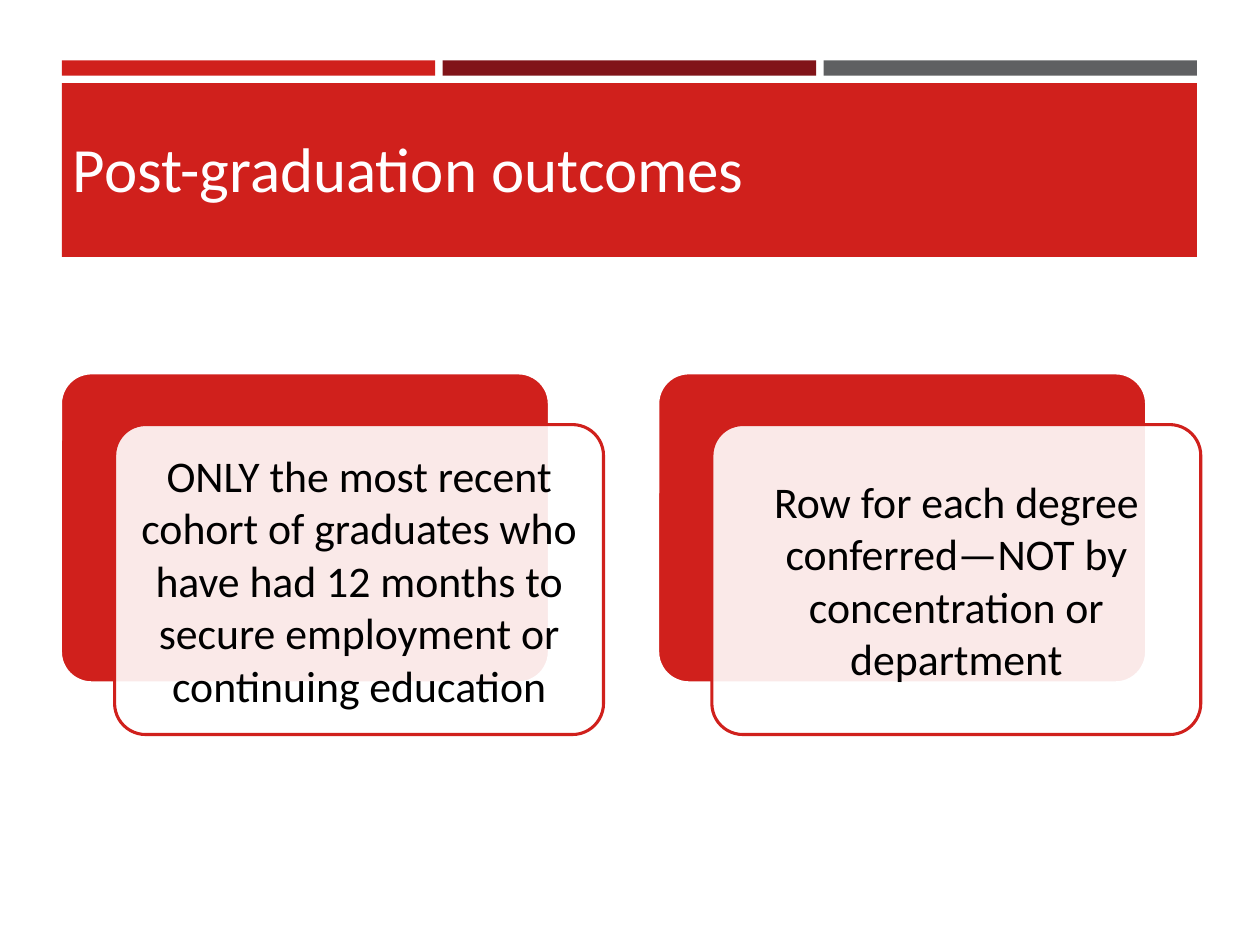
from lxml import etree
from pptx import Presentation
from pptx.dml.color import RGBColor
from pptx.enum import shapes, text
from pptx.oxml import ns
from pptx.util import Inches, Pt

RED = RGBColor(0xD0, 0x20, 0x1C)
MAROON = RGBColor(0x81, 0x14, 0x19)
GRAY = RGBColor(0x5F, 0x60, 0x62)
WHITE = RGBColor(0xFF, 0xFF, 0xFF)
CREAM = RGBColor(0xFF, 0xFE, 0xFF)
BLACK = RGBColor(0, 0, 0)
RECT = shapes.MSO_SHAPE.RECTANGLE
ROUND = shapes.MSO_SHAPE.ROUNDED_RECTANGLE

TITLE = "Post-graduation outcomes"
STRIPES = [RED, MAROON, GRAY]
CARDS = [
    "ONLY the most recent cohort of graduates who have had 12 months to "
    "secure employment or continuing education",
    "Row for each degree conferred—NOT by concentration or department",
]

LEFT, WIDTH, GAP = 0.49, 9.01, 0.06
CARD_X, CARD_Y, CARD_W, CARD_H = 0.48, 2.96, 3.88, 2.46
STEP = 4.74
SHIFT_X, SHIFT_Y = 0.43, 0.41
INSET = 0.07


def add_box(slide, kind, x, y, w, h, fill, line=None, alpha=None):
    box = slide.shapes.add_shape(kind, Inches(x), Inches(y), Inches(w), Inches(h))
    box.shadow.inherit = False
    box.fill.solid()
    box.fill.fore_color.rgb = fill
    if alpha is not None:
        color = box.fill._xPr.find(".//" + ns.qn("a:srgbClr"))
        etree.SubElement(color, ns.qn("a:alpha"), val=str(alpha * 1000))
    if line is None:
        box.line.fill.background()
    else:
        box.line.color.rgb = line
        box.line.width = Pt(1.75)
    if kind == ROUND:
        box.adjustments[0] = 0.1
    return box


def add_text(slide, words, x, y, w, h, size, color, align, pad=None):
    box = slide.shapes.add_textbox(Inches(x), Inches(y), Inches(w), Inches(h))
    frame = box.text_frame
    frame.word_wrap = True
    frame.vertical_anchor = text.MSO_ANCHOR.MIDDLE
    if pad is not None:
        frame.margin_left = frame.margin_right = Inches(pad)
        frame.margin_top = frame.margin_bottom = Inches(pad)
    para = frame.paragraphs[0]
    para.alignment = align
    run = para.add_run()
    run.text = words
    run.font.name = "Calibri"
    run.font.size = Pt(size)
    run.font.color.rgb = color


def main():
    deck = Presentation()
    deck.slide_width, deck.slide_height = Inches(10), Inches(7.5)
    slide = deck.slides.add_slide(deck.slide_layouts[6])

    part = (WIDTH - GAP * (len(STRIPES) - 1)) / len(STRIPES)
    for i, color in enumerate(STRIPES):
        add_box(slide, RECT, LEFT + i * (part + GAP), 0.48, part, 0.12, color)

    add_box(slide, RECT, LEFT, 0.66, WIDTH, 1.38, RED)
    add_text(slide, TITLE, 0.48, 0.77, 9.05, 1.11, size=36, color=CREAM,
             align=text.PP_ALIGN.LEFT)

    for i, words in enumerate(CARDS):
        x = CARD_X + i * STEP
        add_box(slide, ROUND, x, CARD_Y, CARD_W, CARD_H, RED, line=WHITE)
        x, y = x + SHIFT_X, CARD_Y + SHIFT_Y
        add_box(slide, ROUND, x, y, CARD_W, CARD_H, WHITE, line=RED, alpha=90)
        add_text(slide, words, x + INSET, y + INSET, CARD_W - 2 * INSET,
                 CARD_H - 2 * INSET, size=25, color=BLACK,
                 align=text.PP_ALIGN.CENTER, pad=0.1)

    deck.save("out.pptx")


if __name__ == "__main__":
    main()
